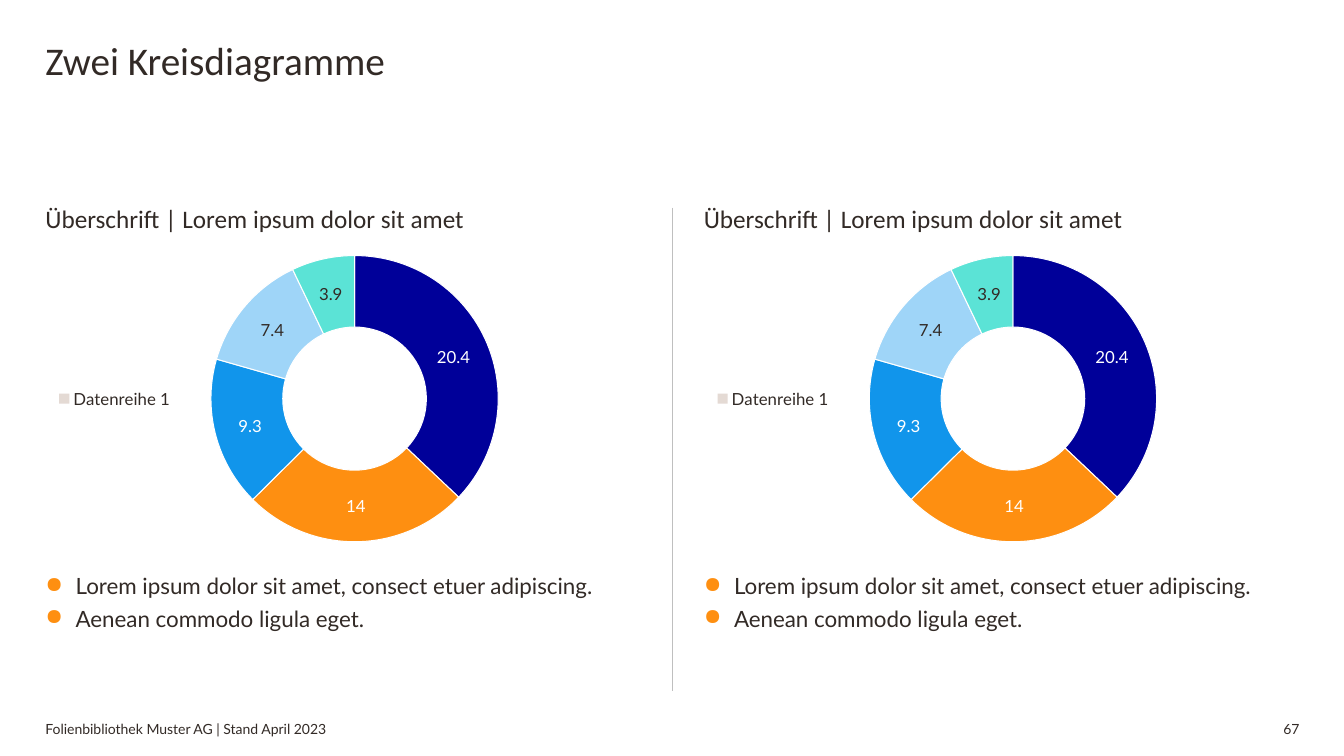
from lxml import etree
from pptx import Presentation
from pptx.chart.data import CategoryChartData
from pptx.dml.color import RGBColor
from pptx.enum.chart import XL_CHART_TYPE, XL_LEGEND_POSITION
from pptx.enum.shapes import MSO_CONNECTOR
from pptx.enum.text import MSO_ANCHOR, PP_ALIGN
from pptx.oxml.ns import qn
from pptx.util import Inches, Pt

DOUGHNUT = XL_CHART_TYPE.DOUGHNUT
LEGEND_LEFT = XL_LEGEND_POSITION.LEFT
STRAIGHT = MSO_CONNECTOR.STRAIGHT
TOP, BOTTOM = MSO_ANCHOR.TOP, MSO_ANCHOR.BOTTOM
LEFT, RIGHT = PP_ALIGN.LEFT, PP_ALIGN.RIGHT

INK = RGBColor(0x32, 0x2A, 0x26)
WHITE = RGBColor(0xFF, 0xFF, 0xFF)
RULE = RGBColor(0xBF, 0xBF, 0xBF)
SAND = RGBColor(0xE4, 0xDA, 0xD4)
NAVY = RGBColor(0x00, 0x00, 0x99)
ORANGE = RGBColor(0xFE, 0x8F, 0x11)
BLUE = RGBColor(0x11, 0x95, 0xEB)
SKY = RGBColor(0x9F, 0xD5, 0xF8)
MINT = RGBColor(0x5B, 0xE3, 0xD6)

HEADING_FONT, BODY_FONT = "Calibri", "Lato"

# Two columns with a gutter, 75 rows; inches
SLIDE_WIDTH, SLIDE_HEIGHT = 13.33, 7.5
MARGIN, COLUMN_PITCH, GUTTER = 0.45, 6.53, 0.62
ROW = SLIDE_HEIGHT / 75

# Value, segment colour, label colour
SEGMENTS = [
    (20.4, NAVY, WHITE),
    (14, ORANGE, WHITE),
    (9.3, BLUE, WHITE),
    (7.4, SKY, INK),
    (3.9, MINT, INK),
]
PLOT_AREA = {"x": 0.125, "y": 0, "w": 0.788, "h": 1}
HEADING = "Überschrift | Lorem ipsum dolor sit amet"
POINTS = [
    "Lorem ipsum dolor sit amet, consect etuer adipiscing.",
    "Aenean commodo ligula eget.",
]


class SlideBuilder:
    def __init__(self, slide):
        self.slide = slide

    def area(self, column, row, columns, rows):
        return (
            Inches(MARGIN + column * COLUMN_PITCH),
            Inches(row * ROW),
            Inches(columns * COLUMN_PITCH - GUTTER),
            Inches(rows * ROW),
        )

    def style(self, font, size, color=INK, name=BODY_FONT):
        font.size = Pt(size)
        font.name = name
        font.color.rgb = color

    def text(self, area, lines, size, name=BODY_FONT, anchor=TOP,
             align=LEFT, after=0, bullets=False, wrap=True):
        frame = self.slide.shapes.add_textbox(*self.area(*area)).text_frame
        frame.margin_left = frame.margin_right = 0
        frame.margin_top = frame.margin_bottom = 0
        frame.word_wrap = wrap
        frame.vertical_anchor = anchor
        frame.text = "\n".join(lines)
        for para in frame.paragraphs:
            if bullets:
                self.bullet(para)
            para.alignment = align
            para.space_after = Pt(after)
            for span in para.runs:
                self.style(span.font, size, name=name)

    def bullet(self, para):
        properties = para._p.get_or_add_pPr()
        properties.set("marL", str(Inches(0.3)))
        properties.set("indent", str(Inches(-0.3)))
        color = etree.SubElement(properties, qn("a:buClr"))
        etree.SubElement(color, qn("a:srgbClr"), val=str(ORANGE))
        etree.SubElement(properties, qn("a:buChar"), char="●")

    def doughnut(self, area):
        data = CategoryChartData()
        data.categories = [str(number + 1) for number in range(len(SEGMENTS))]
        data.add_series("Datenreihe 1", [value for value, _, _ in SEGMENTS])
        frame = self.slide.shapes.add_chart(DOUGHNUT, *self.area(*area), data)
        chart = frame.chart
        chart.has_title = False
        self.style(chart.font, 8)
        chart.has_legend = True
        chart.legend.position = LEGEND_LEFT
        chart.legend.include_in_layout = False
        self.style(chart.legend.font, 12)

        plot = chart.plots[0]
        plot.vary_by_categories = False
        series = plot.series[0]
        series.format.fill.solid()
        series.format.fill.fore_color.rgb = SAND
        series.data_labels.show_value = True
        self.style(series.data_labels.font, 12)
        for index, (_, color, label_color) in enumerate(SEGMENTS):
            point = series.points[index]
            point.format.fill.solid()
            point.format.fill.fore_color.rgb = color
            point.format.line.color.rgb = WHITE
            point.format.line.width = Pt(0.75)
            self.style(point.data_label.font, 12, label_color)
        self.place_plot(chart)

    def place_plot(self, chart):
        plot_area = chart._chartSpace.find(".//" + qn("c:plotArea"))
        for layout in plot_area.findall(qn("c:layout")):
            plot_area.remove(layout)
        layout = etree.Element(qn("c:layout"))
        plot_area.insert(0, layout)
        manual = etree.SubElement(layout, qn("c:manualLayout"))
        etree.SubElement(manual, qn("c:layoutTarget"), val="inner")
        for side in ("x", "y"):
            etree.SubElement(manual, qn(f"c:{side}Mode"), val="edge")
        for side, share in PLOT_AREA.items():
            etree.SubElement(manual, qn(f"c:{side}"), val=str(share))

    def divider(self, first_row, last_row):
        middle = Inches(MARGIN + COLUMN_PITCH - GUTTER / 2)
        line = self.slide.shapes.add_connector(
            STRAIGHT, middle, Inches(first_row * ROW),
            middle, Inches(last_row * ROW))
        line.line.color.rgb = RULE
        line.line.width = Pt(0.75)
        etree.SubElement(line._element.spPr, qn("a:effectLst"))


def main():
    deck = Presentation()
    deck.slide_width = Inches(SLIDE_WIDTH)
    deck.slide_height = Inches(SLIDE_HEIGHT)
    page = SlideBuilder(deck.slides.add_slide(deck.slide_layouts[6]))

    # Title and footer
    page.text((0, 3.6, 1.57, 5.5), ["Zwei Kreisdiagramme"], 28, HEADING_FONT)
    page.text((0, 71.6, 1.79, 1.6),
              ["Folienbibliothek Muster AG | Stand April 2023"], 10,
              anchor=BOTTOM)
    page.text((1.86, 71.6, 0.14, 1.6), ["67"], 10, anchor=BOTTOM,
              align=RIGHT, wrap=False)

    # Heading, chart and bullets in each column
    for column in range(2):
        page.text((column, 20.2, 1, 3.5), [HEADING], 18, HEADING_FONT, after=4)
        page.doughnut((column, 25.3, 1, 28.5))
        page.text((column, 56.8, 1, 11.8), POINTS, 16, after=4, bullets=True)

    # Rule between the columns
    page.divider(20.6, 68.6)

    deck.save("out.pptx")


if __name__ == "__main__":
    main()
